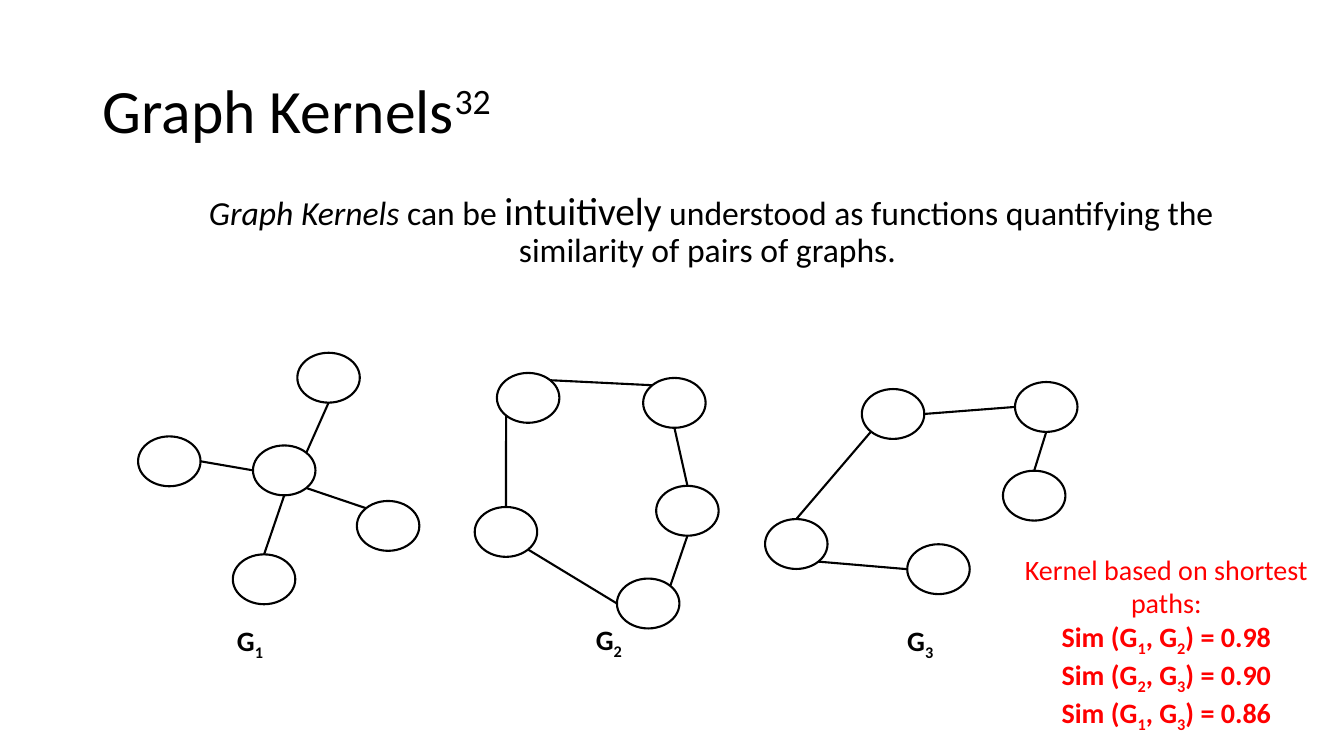
import math

import pptx
import pptx.dml.color
import pptx.enum.shapes
import pptx.enum.text
import pptx.oxml
import pptx.oxml.ns
import pptx.util

COLORS = {"ink": "000000", "result": "FF0000"}
NODE_WIDTH, NODE_HEIGHT = 4.65, 6.6
SUBSCRIPT = {"baseline": -25}

# Angles of the points on a node where edges attach, clockwise from the right
SITES = {"E": 0, "SE": 45, "S": 90, "SW": 135, "W": 180, "NW": 225, "N": 270, "NE": 315}

# Node centres in percent of the slide; edges as node, site, node, site
GRAPHS = [
    {
        "number": "1", "label": (16.28, 81.87),
        "nodes": {"hub": (21.15, 62.22), "west": (12.6, 61.02), "east": (28.88, 69.56),
                  "south": (19.65, 76.63), "north": (24.45, 49.96)},
        "edges": [("hub", "W", "west", "E"), ("hub", "SE", "east", "NW"),
                  ("hub", "S", "south", "N"), ("north", "S", "hub", "NE")],
    },
    {
        "number": "2", "label": (42.98, 81.73),
        "nodes": {"top left": (39.3, 52.63), "top right": (50.18, 53.29),
                  "right": (51.15, 67.56), "bottom": (48.23, 79.83), "left": (37.65, 70.36)},
        "edges": [("top left", "SW", "left", "N"), ("right", "S", "bottom", "NE"),
                  ("bottom", "W", "left", "SE"), ("top right", "NW", "top left", "NE"),
                  ("right", "N", "top right", "S")],
    },
    {
        "number": "3", "label": (66.15, 81.87),
        "nodes": {"top": (66.45, 54.76), "top right": (77.85, 53.83),
                  "right": (76.95, 65.56), "left": (59.25, 71.96), "bottom": (69.83, 75.29)},
        "edges": [("top", "SW", "left", "N"), ("top right", "W", "top", "E"),
                  ("bottom", "W", "left", "SE"), ("top right", "S", "right", "N")],
    },
]
SIMILARITIES = [("1", "2", "0.98"), ("2", "3", "0.90"), ("1", "3", "0.86")]


def add_run(paragraph, text, *, size, color="ink", bold=False, italic=False, baseline=0):
    """Append formatted text; baseline is a percentage, negative for subscript."""
    run = paragraph.add_run()
    run.text = text
    font = run.font
    font.name = "Calibri"
    font.size = pptx.util.Pt(size)
    font.bold, font.italic = bold, italic
    font.color.rgb = pptx.dml.color.RGBColor.from_string(COLORS[color])
    if baseline:
        run._r.get_or_add_rPr().set("baseline", str(baseline * 1000))


class GraphSlide:
    """Draws on one slide, with every position and size in percent of the slide."""

    line_width = pptx.util.Pt(1.5)

    def __init__(self, presentation):
        self.width, self.height = presentation.slide_width, presentation.slide_height
        self.shapes = presentation.slides.add_slide(presentation.slide_layouts[6]).shapes

    def scale(self, x, y):
        return round(self.width * x / 100), round(self.height * y / 100)

    def style_line(self, line):
        line.color.rgb = pptx.dml.color.RGBColor.from_string(COLORS["ink"])
        line.width = self.line_width

    def text(self, corner, extent, paragraphs, *, centered=True, middle=False, grow=False,
             indent=0, spacing=1.0, before=0, **style):
        """Add a text box; each paragraph is a list of (text, format overrides)."""
        frame = self.shapes.add_textbox(*self.scale(*corner), *self.scale(*extent)).text_frame
        frame.word_wrap = True
        frame.margin_left = pptx.util.Inches(0.1) + round(self.width * indent / 100)
        if middle:
            frame.vertical_anchor = pptx.enum.text.MSO_ANCHOR.MIDDLE
        if grow:
            frame.auto_size = pptx.enum.text.MSO_AUTO_SIZE.SHAPE_TO_FIT_TEXT
        align = pptx.enum.text.PP_ALIGN
        for index, pieces in enumerate(paragraphs):
            paragraph = frame.add_paragraph() if index else frame.paragraphs[0]
            paragraph.alignment = align.CENTER if centered else align.LEFT
            paragraph.line_spacing = spacing
            paragraph.space_before = pptx.util.Pt(before)
            for text, overrides in pieces:
                add_run(paragraph, text, **{**style, **overrides})

    def node(self, center):
        x, y = center
        ellipse = self.shapes.add_shape(
            pptx.enum.shapes.MSO_SHAPE.OVAL,
            *self.scale(x - NODE_WIDTH / 2, y - NODE_HEIGHT / 2),
            *self.scale(NODE_WIDTH, NODE_HEIGHT))
        ellipse.shadow.inherit = False
        ellipse.fill.background()
        self.style_line(ellipse.line)

    def site(self, center, direction):
        """Return the point on a node's outline in a compass direction."""
        angle = math.radians(SITES[direction])
        return self.scale(center[0] + NODE_WIDTH / 2 * math.cos(angle),
                          center[1] + NODE_HEIGHT / 2 * math.sin(angle))

    def edge(self, start, end):
        connector = self.shapes.add_connector(
            pptx.enum.shapes.MSO_CONNECTOR.STRAIGHT, *start, *end)
        self.style_line(connector.line)
        connector._element.spPr.append(pptx.oxml.parse_xml(
            f"<a:effectLst {pptx.oxml.ns.nsdecls('a')}/>"))

    def graph(self, number, label, nodes, edges):
        for center in nodes.values():
            self.node(center)
        for source, leaving, target, arriving in edges:
            self.edge(self.site(nodes[source], leaving), self.site(nodes[target], arriving))
        self.text(label, (4.65, 5.87), [[("G", {}), (number, SUBSCRIPT)]],
                  grow=True, size=20, bold=True)


def similarity(first, second, value):
    pieces = [("Sim (G", {}), (first, SUBSCRIPT), (", G", {}), (second, SUBSCRIPT),
              (f") = {value}", {})]
    return [(text, {"bold": True, **overrides}) for text, overrides in pieces]


def main():
    presentation = pptx.Presentation()
    presentation.slide_width = pptx.util.Inches(13.33)
    presentation.slide_height = pptx.util.Inches(7.5)
    slide = GraphSlide(presentation)

    slide.text((6.9, 5.33), (86.25, 19.33),
               [[("Graph Kernels", {}), ("32", {"baseline": 30})]],
               centered=False, middle=True, spacing=0.9, size=44)
    slide.text((6.9, 24.67), (88.28, 72.27),
               [[("Graph Kernels", {"italic": True}), (" can be ", {}),
                 ("intuitively", {"size": 28}),
                 (" understood as functions quantifying the similarity of pairs of graphs. ",
                  {})]],
               indent=3.75, spacing=0.9, before=5, size=24)
    for graph in GRAPHS:
        slide.graph(**graph)
    slide.text((73.88, 72.4), (25.8, 23.73),
               [[("Kernel based on shortest paths:", {})],
                *(similarity(*row) for row in SIMILARITIES)],
               grow=True, size=20, color="result")

    presentation.save("out.pptx")


if __name__ == "__main__":
    main()
